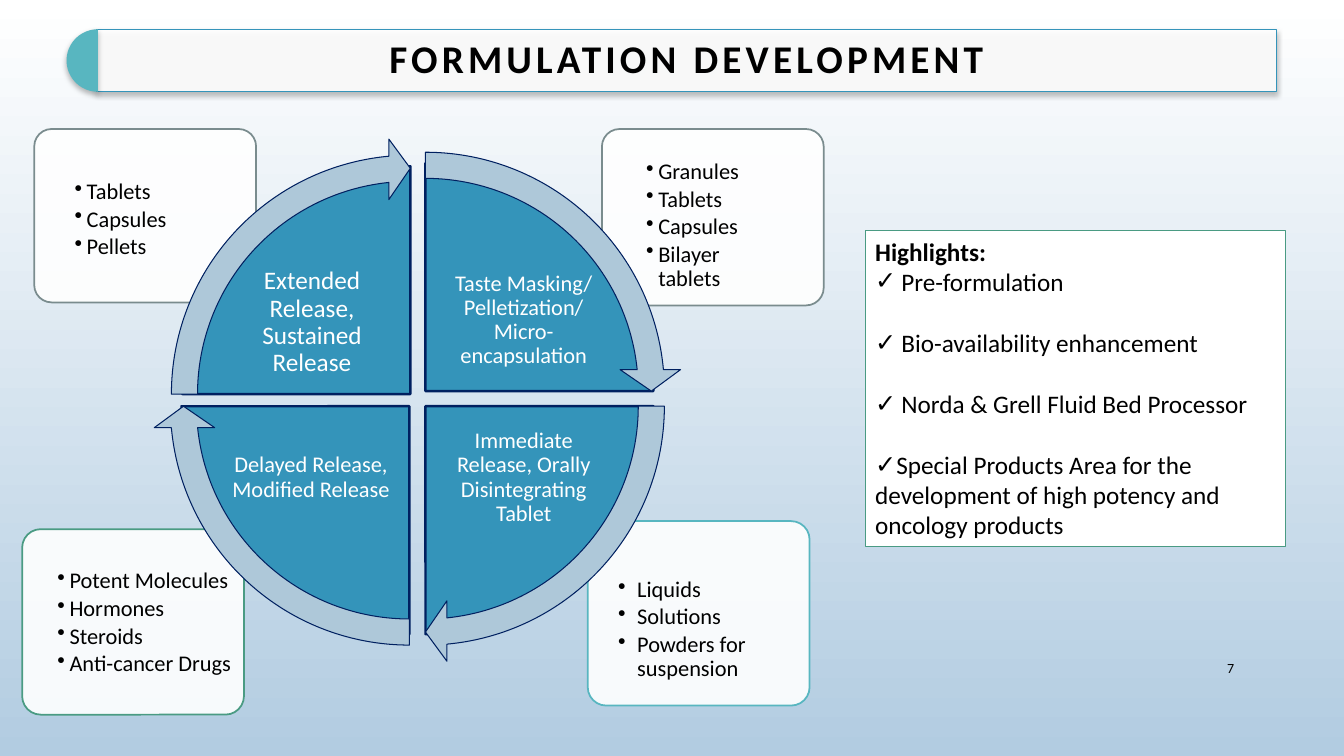
from lxml import etree
from pptx import Presentation
from pptx import util as u
from pptx.dml import color as dml
from pptx.enum import shapes, text
from pptx.oxml import ns

PX = 9144
FONT = "Calibri"
BLACK, WHITE, NAVY, BLUE, TEAL, GREEN = "000000", "FFFFFF", "002060", "3494BA", "58B6C0", "4A9B83"
GREY, PALE = "7A8C8E", "AEC8D9"
TOP, MIDDLE, BOTTOM = text.MSO_ANCHOR.TOP, text.MSO_ANCHOR.MIDDLE, text.MSO_ANCHOR.BOTTOM
LEFT, CENTER, RIGHT = text.PP_ALIGN.LEFT, text.PP_ALIGN.CENTER, text.PP_ALIGN.RIGHT

TITLE = "FORMULATION DEVELOPMENT"
TITLE_BOX = (96, 29, 1170, 62)
TITLE_CAP = (66, 29, 62, 62)
HIGHLIGHTS_BOX = (858, 229, 417, 313)
HIGHLIGHTS_HEADING = "Highlights:"
HIGHLIGHTS = [
    ("Pre-formulation", 26, 0),
    ("Bio-availability enhancement", 26, 22),
    ("Norda & Grell Fluid Bed Processor", 26, 22),
    ("Special Products Area for the development of high potency and oncology products", 0, 22),
]
CARDS = [
    ((34, 128, 220, 172), GREY, (69, 174, 131, 85), TOP, 12,
     ["Tablets", "Capsules", "Pellets"]),
    ((583, 517, 220, 183), TEAL, (608, 538, 172, 143), BOTTOM, 19,
     ["Liquids", "Solutions", "Powders for suspension"]),
    ((597, 128, 220, 175), GREY, (636, 154, 146, 123), TOP, 12,
     ["Granules", "Tablets", "Capsules", "Bilayer tablets"]),
    ((22, 525, 220, 184), GREEN, (52, 546, 188, 130), BOTTOM, 12,
     ["Potent Molecules", "Hormones", "Steroids", "Anti-cancer Drugs"]),
]
QUADRANTS = [
    (162, (196, 162), (436, 256), 16, "Taste Masking/ Pelletization/ Micro-encapsulation"),
    (0, (196, 177), (436, 412), 16, "Immediate Release, Orally Disintegrating Tablet"),
    (54, (180, 177), (225, 412), 16, "Delayed Release, Modified Release"),
    (108, (181, 165), (226, 258), 18, "Extended Release, Sustained Release"),
]
PIE_SIZE, ARROW_MARGIN, LABEL_SIZE = 452, 28, (167, 124)
QUARTER, FULL_TURN, HEAD_ANGLE = 54, 216, 3.275
PAGE_NUMBER, PAGE_NUMBER_BOX = "7", (1150, 643, 84, 40)


def rgb(value):
    """Return the colour for a hex string."""
    return dml.RGBColor.from_string(value)


def emu(lengths):
    """Turn px lengths into EMU."""
    return [length * PX for length in lengths]


def paint(shape, fill, line=None, width=0.75, alpha=None):
    """Set fill, outline and opacity of a shape, without shadow."""
    shape.shadow.inherit = False
    shape.fill.solid()
    shape.fill.fore_color.rgb = rgb(fill)
    if alpha:
        fill_color = shape.element.spPr.find(ns.qn("a:solidFill"))[0]
        etree.SubElement(fill_color, ns.qn("a:alpha"), val=str(alpha * 1000))
    if line:
        shape.line.color.rgb = rgb(line)
        shape.line.width = u.Pt(width)
    else:
        shape.line.fill.background()


def add_shadow(shape):
    """Give a painted shape a soft shadow below it."""
    effects = shape.element.spPr.find(ns.qn("a:effectLst"))
    shadow = etree.SubElement(effects, ns.qn("a:outerShdw"), blurRad="50800", dist="25400",
                              dir="5400000", algn="ctr", rotWithShape="0")
    shadow_color = etree.SubElement(shadow, ns.qn("a:srgbClr"), val=BLACK)
    etree.SubElement(shadow_color, ns.qn("a:alpha"), val="28000")


def add_preset(slide, kind, box, adjustments):
    """Add a preset shape with its adjustments."""
    shape = slide.shapes.add_shape(kind, *emu(box))
    for index, value in enumerate(adjustments):
        shape.adjustments[index] = value
    return shape


def place(placeholder, box):
    """Move a placeholder to a box."""
    placeholder.left, placeholder.top, placeholder.width, placeholder.height = emu(box)


def set_frame(frame, anchor, inset_x, inset_y):
    """Set wrapping, anchor and insets of a text frame."""
    frame.word_wrap = True
    frame.auto_size = text.MSO_AUTO_SIZE.NONE
    frame.vertical_anchor = anchor
    frame.margin_left = frame.margin_right = inset_x * PX
    frame.margin_top = frame.margin_bottom = inset_y * PX


def set_bullet(paragraph, character, indent):
    """Give a paragraph a hanging bullet, or none."""
    properties = paragraph._p.get_or_add_pPr()
    properties.set("marL", str(indent * PX))
    properties.set("indent", str(-indent * PX))
    if character:
        etree.SubElement(properties, ns.qn("a:buChar"), char=character)
    else:
        etree.SubElement(properties, ns.qn("a:buNone"))


def style(paragraph, size, color=BLACK, bold=False, align=LEFT, spacing=1.0, before=0, after=0):
    """Set font, alignment and spacing of a paragraph."""
    paragraph.alignment = align
    paragraph.line_spacing = spacing
    paragraph.space_before, paragraph.space_after = u.Pt(before), u.Pt(after)
    font = paragraph.font
    font.name, font.size, font.bold = FONT, u.Pt(size), bold
    font.color.rgb = rgb(color)


def add_paragraphs(frame, lines):
    """Write lines into a frame and return the paragraphs."""
    frame.text = "\n".join(lines)
    return frame.paragraphs


def add_label(slide, box, label, size, color, align, inset, spacing):
    """Add a text box with one centred line block."""
    frame = slide.shapes.add_textbox(*emu(box)).text_frame
    set_frame(frame, MIDDLE, inset, inset)
    style(add_paragraphs(frame, [label])[0], size, color, align=align, spacing=spacing)


def add_title(slide):
    """Fill the title bar and its round cap."""
    cap = add_preset(slide, shapes.MSO_SHAPE.PIE, TITLE_CAP, (QUARTER, QUARTER * 3))
    paint(cap, TEAL)
    add_shadow(cap)
    title = slide.shapes.title
    place(title, TITLE_BOX)
    paint(title, WHITE, BLUE, alpha=90)
    add_shadow(title)
    set_frame(title.text_frame, MIDDLE, 12, 12)
    paragraph = add_paragraphs(title.text_frame, [TITLE])[0]
    style(paragraph, 28, bold=True, align=CENTER, spacing=0.9)
    paragraph._p.pPr.find(ns.qn("a:defRPr")).set("spc", "300")


def add_highlights(slide):
    """Fill the body placeholder with the highlights."""
    body = slide.placeholders[1]
    place(body, HIGHLIGHTS_BOX)
    paint(body, WHITE, GREEN)
    set_frame(body.text_frame, TOP, 10, 5)
    lines = [HIGHLIGHTS_HEADING] + [item for item, _, _ in HIGHLIGHTS]
    heading, *items = add_paragraphs(body.text_frame, lines)
    set_bullet(heading, None, 0)
    style(heading, 18, bold=True)
    for paragraph, (_, indent, before) in zip(items, HIGHLIGHTS):
        set_bullet(paragraph, "✓", indent)
        style(paragraph, 18, before=before)


def add_card(slide, box, line, list_box, anchor, indent, items):
    """Add a rounded card with its bullet list."""
    card = add_preset(slide, shapes.MSO_SHAPE.ROUNDED_RECTANGLE, box, (0.1,))
    paint(card, WHITE, line, 1.25, 90)
    frame = slide.shapes.add_textbox(*emu(list_box)).text_frame
    set_frame(frame, anchor, 5, 5)
    for paragraph in add_paragraphs(frame, items):
        set_bullet(paragraph, "•", indent)
        style(paragraph, 16, spacing=0.9, after=2.4)


def add_wheel(slide):
    """Draw the four quadrants, then the arrows around them."""
    for start, corner, label_corner, size, label in QUADRANTS:
        end = (start + QUARTER) % FULL_TURN
        pie = add_preset(slide, shapes.MSO_SHAPE.PIE, (*corner, PIE_SIZE, PIE_SIZE), (start, end))
        paint(pie, BLUE, NAVY, 1.75)
        add_label(slide, (*label_corner, *LABEL_SIZE), label, size, WHITE, CENTER, 2, 0.9)
    arrow_size = PIE_SIZE + 2 * ARROW_MARGIN
    for start, (left, top), *_ in QUADRANTS:
        box = (left - ARROW_MARGIN, top - ARROW_MARGIN, arrow_size, arrow_size)
        bends = (0.051, HEAD_ANGLE, start + QUARTER - HEAD_ANGLE, start, 0.059)
        paint(add_preset(slide, shapes.MSO_SHAPE.CIRCULAR_ARROW, box, bends), PALE, NAVY)


def main():
    """Build the slide and save it."""
    presentation = Presentation()
    presentation.slide_width, presentation.slide_height = emu((1333, 750))
    slide = presentation.slides.add_slide(presentation.slide_layouts[1])
    background = slide.background.fill
    background.gradient()
    background.gradient_angle = 270
    for stop, color in zip(background.gradient_stops, (WHITE, "B2CCE1")):
        stop.color.rgb = rgb(color)
    add_title(slide)
    add_highlights(slide)
    for card in CARDS:
        add_card(slide, *card)
    add_wheel(slide)
    add_label(slide, PAGE_NUMBER_BOX, PAGE_NUMBER, 10, BLACK, RIGHT, 10, 1.0)
    presentation.save("out.pptx")


if __name__ == "__main__":
    main()
